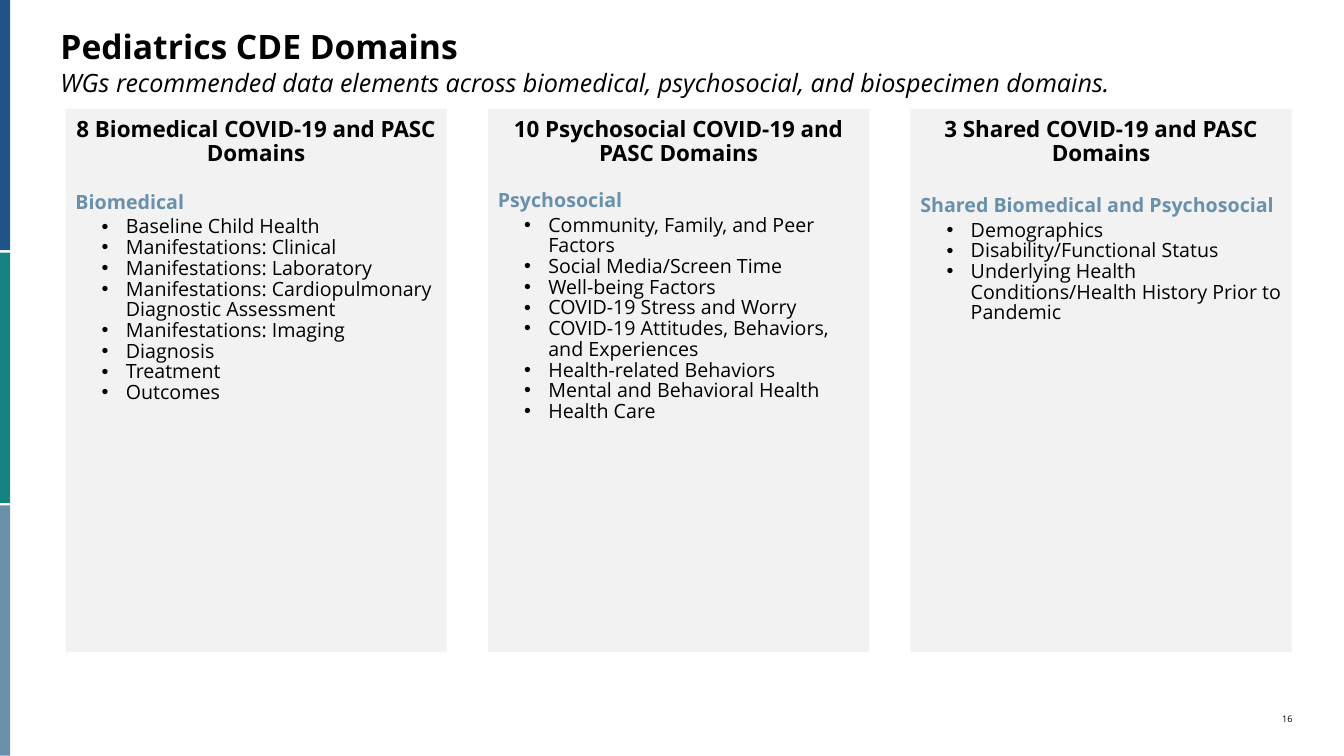
from lxml.etree import SubElement
from pptx import Presentation
from pptx.dml.color import RGBColor
from pptx.enum.shapes import MSO_SHAPE
from pptx.enum.text import MSO_ANCHOR, PP_ALIGN
from pptx.oxml.ns import qn
from pptx.util import Inches, Pt

BLACK = RGBColor(0x00, 0x00, 0x00)
PANEL_GRAY = RGBColor(0xF2, 0xF2, 0xF2)
NAVY = RGBColor(0x20, 0x55, 0x8A)
TEAL = RGBColor(0x17, 0x83, 0x81)
STEEL = RGBColor(0x69, 0x91, 0xAC)

# Heading, gap above the group name in points, group name, domains
PANELS = [
    ("8 Biomedical COVID-19 and PASC Domains", 19, "Biomedical", [
        "Baseline Child Health",
        "Manifestations: Clinical",
        "Manifestations: Laboratory",
        "Manifestations: Cardiopulmonary Diagnostic Assessment",
        "Manifestations: Imaging",
        "Diagnosis",
        "Treatment",
        "Outcomes",
    ]),
    ("10 Psychosocial COVID-19 and PASC Domains", 17.7, "Psychosocial", [
        "Community, Family, and Peer Factors",
        "Social Media/Screen Time",
        "Well-being Factors",
        "COVID-19 Stress and Worry",
        "COVID-19 Attitudes, Behaviors, and Experiences",
        "Health-related Behaviors",
        "Mental and Behavioral Health",
        "Health Care",
    ]),
    ("3 Shared COVID-19 and PASC Domains", 21.3,
     "Shared Biomedical and Psychosocial", [
         "Demographics",
         "Disability/Functional Status",
         "Underlying Health Conditions/Health History Prior to Pandemic",
     ]),
]


class DomainSlide:
    """Style and current slide; lengths are percentages of the slide's size."""

    font_name = "Open Sans"
    line_spacing = 0.88

    def __init__(self, deck):
        self.deck = deck
        self.page = deck.slides.add_slide(deck.slide_layouts[6])

    def place(self, left, top, width, height):
        across, down = self.deck.slide_width / 100, self.deck.slide_height / 100
        return (round(left * across), round(top * down),
                round(width * across), round(height * down))

    def block(self, area, color):
        shape = self.page.shapes.add_shape(MSO_SHAPE.RECTANGLE, *self.place(*area))
        shape.shadow.inherit = False
        shape.fill.solid()
        shape.fill.fore_color.rgb = color
        shape.line.fill.background()
        return shape

    def frame(self, shape, margin, anchor):
        frame = shape.text_frame
        frame.word_wrap = True
        frame.vertical_anchor = anchor
        frame.margin_left = frame.margin_right = Inches(margin)
        frame.margin_top = frame.margin_bottom = Inches(margin)
        return frame

    def set_text(self, para, text, size, color=BLACK, bold=False, italic=False,
                 align=PP_ALIGN.LEFT, before=0, after=0, spacing=1.0):
        para.text = text
        para.alignment = align
        para.line_spacing = spacing
        para.space_before, para.space_after = Pt(before), Pt(after)
        font = para.font
        font.name, font.size = self.font_name, Pt(size)
        font.bold, font.italic = bold, italic
        font.color.rgb = color

    def label(self, area, text, size, anchor=MSO_ANCHOR.MIDDLE, **style):
        box = self.page.shapes.add_textbox(*self.place(*area))
        frame = self.frame(box, 0, anchor)
        self.set_text(frame.paragraphs[0], text, size, **style)

    def bullet(self, para, text):
        para.level = 1
        properties = para._p.get_or_add_pPr()
        properties.set("marL", str(Inches(0.5)))
        properties.set("indent", str(Inches(-0.24)))
        SubElement(properties, qn("a:buFont")).set("typeface", "Arial")
        SubElement(properties, qn("a:buChar")).set("char", "•")
        self.set_text(para, text, 14, spacing=self.line_spacing)

    def panel(self, area, heading, gap, group, domains):
        shape = self.block(area, PANEL_GRAY)
        frame = self.frame(shape, 0.1, MSO_ANCHOR.TOP)
        self.set_text(frame.paragraphs[0], heading, 16, bold=True,
                      align=PP_ALIGN.CENTER, spacing=self.line_spacing)
        self.set_text(frame.add_paragraph(), group, 14, STEEL, bold=True,
                      before=gap, after=2.7, spacing=self.line_spacing)
        for domain in domains:
            self.bullet(frame.add_paragraph(), domain)


def main():
    deck = Presentation()
    deck.slide_width, deck.slide_height = Inches(13.33), Inches(7.5)
    slide = DomainSlide(deck)

    # Colour bars down the left edge
    for row, color in enumerate((NAVY, TEAL, STEEL)):
        slide.block((0, row * 33.43, 0.75, 33.1), color)

    # Title and subtitle
    slide.label((4.5, 3.47, 93.5, 5.33), "Pediatrics CDE Domains", 24, bold=True)
    slide.label((4.5, 9.33, 93.5, 6.67),
                "WGs recommended data elements across biomedical, "
                "psychosocial, and biospecimen domains.",
                18, anchor=MSO_ANCHOR.TOP, italic=True, spacing=0.9)

    # Domain panels
    for column, panel in enumerate(PANELS):
        slide.panel((4.88 + column * 31.43, 14.4, 28.36, 71.87), *panel)

    # Page number
    slide.label((93.62, 94.4, 2.55, 1.47), "16", 6.5, align=PP_ALIGN.RIGHT)

    deck.save("out.pptx")


if __name__ == "__main__":
    main()
